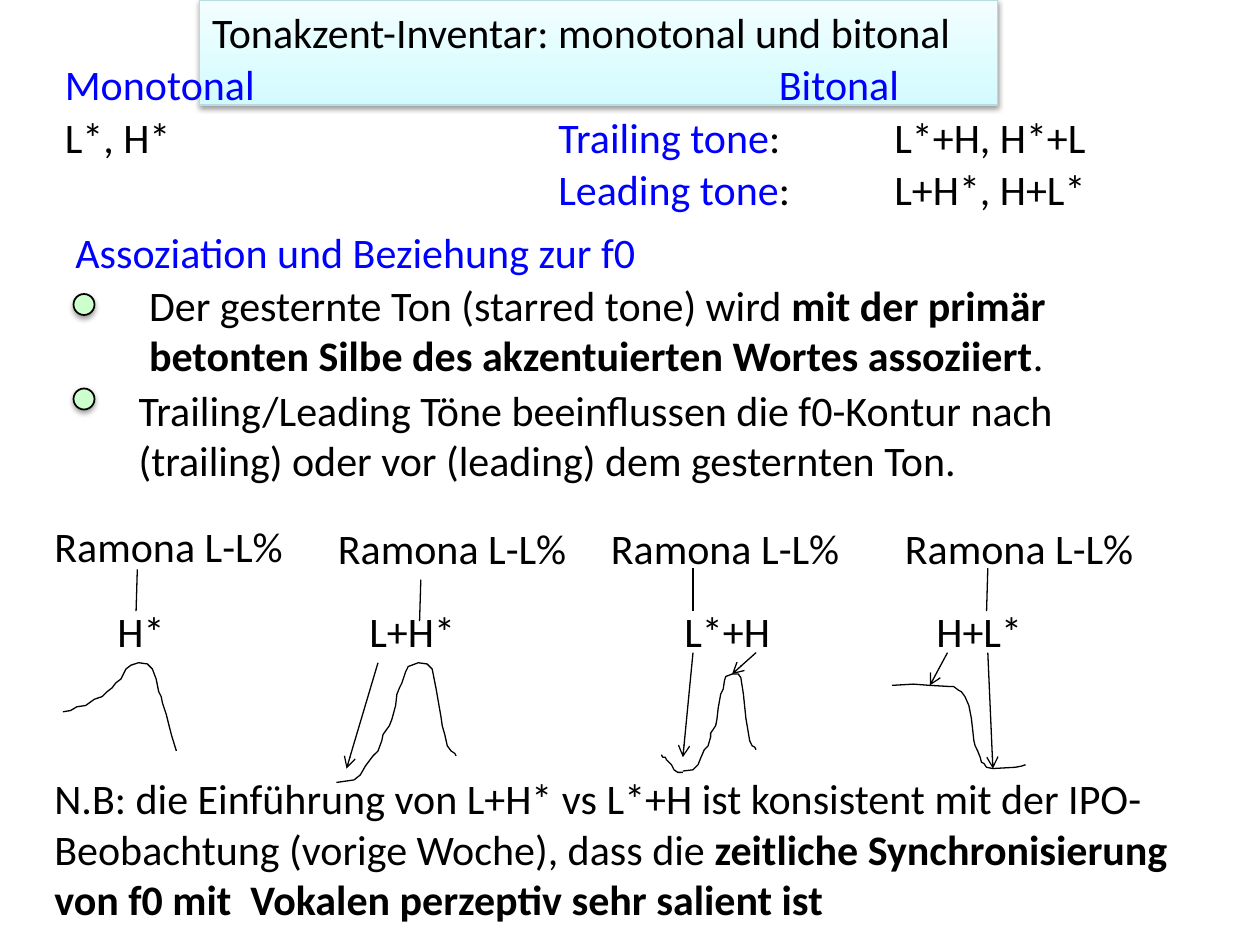
from lxml import etree
from pptx import Presentation
from pptx.dml.color import RGBColor
from pptx.enum.shapes import MSO_CONNECTOR, MSO_SHAPE
from pptx.enum.text import MSO_ANCHOR, MSO_AUTO_SIZE, PP_ALIGN
from pptx.oxml import parse_xml
from pptx.oxml.ns import qn
from pptx.util import Inches, Pt

STRAIGHT = MSO_CONNECTOR.STRAIGHT
OVAL = MSO_SHAPE.OVAL
TOP = MSO_ANCHOR.TOP
LEFT = PP_ALIGN.LEFT
FIT_SHAPE = MSO_AUTO_SIZE.SHAPE_TO_FIT_TEXT
COLORS = {
    "black": "000000", "blue": "0000FF", "green": "CCFFCC",
    "cyan": "D3FBFF", "pale": "F2FEFF", "edge": "B6DCDF",
}
RGB = {name: RGBColor.from_string(value) for name, value in COLORS.items()}
SHADOW = (
    '<a:outerShdw xmlns:a="http://schemas.openxmlformats.org/drawingml/2006/main" '
    'blurRad="40000" dist="20000" dir="5400000" rotWithShape="0">'
    '<a:srgbClr val="000000"><a:alpha val="38000"/></a:srgbClr></a:outerShdw>'
)

prs = Presentation()
prs.slide_width, prs.slide_height = Inches(10), Inches(7.5)
CELL = prs.slide_width / 120
FINE = prs.slide_width / 1000
s = prs.slides.add_slide(prs.slide_layouts[3])
title, first_item, second_item = s.placeholders


def write(sp, box, runs):
    sp.left, sp.top, sp.width, sp.height = [int(n * CELL) for n in box]
    tf = sp.text_frame
    tf.word_wrap = True
    tf.auto_size = FIT_SHAPE
    tf.vertical_anchor = TOP
    p = tf.paragraphs[0]
    p.alignment = LEFT
    p.space_before = Pt(0)
    for text, color, bold in runs:
        r = p.add_run()
        r.text = text
        r.font.name = "Calibri"
        r.font.size = Pt(24)
        r.font.bold = bold
        r.font.color.rgb = RGB[color]


def add_shadow(sp):
    sp.shadow.inherit = False
    sp._element.spPr.find(qn("a:effectLst")).append(parse_xml(SHADOW))


write(title, (19, 0, 76, 6.1), [("Tonakzent-Inventar: monotonal und bitonal", "black", False)])
title.fill.gradient()
title.fill.gradient_angle = 90
for stop, color in zip(title.fill.gradient_stops, ("cyan", "pale")):
    stop.color.rgb = RGB[color]
title.line.color.rgb = RGB["edge"]
title.line.width = Pt(0.75)
add_shadow(title)

texts = [
    ((5, 5, 25, 6.1), [("Monotonal", "blue", False)]),
    ((73, 5, 17, 6.1), [("Bitonal", "blue", False)]),
    ((5, 10, 18, 6.1), [("L*, H*", "black", False)]),
    ((6, 21, 74, 6), [("Assoziation und Beziehung zur f0", "blue", False)]),
    ((4, 73, 109, 15.7), [
        ("N.B: die Einführung von L+H* vs L*+H ist konsistent mit der "
         "IPO-Beobachtung (vorige Woche), dass die ", "black", False),
        ("zeitliche Synchronisierung von f0 mit  Vokalen perzeptiv sehr salient ist", "black", True),
    ]),
]
for row, label, accents in [(10, "Trailing tone", "L*+H, H*+L"), (15, "Leading tone", "L+H*, H+L*")]:
    texts.append(((52, row, 29, 6.1), [(label, "blue", False), (":", "black", False)]))
    texts.append(((84, row, 23, 6.1), [(accents, "black", False)]))
for word_col, word_row, accent_col, accent in [
    (4, 49, 10, "H*"), (31, 49.2, 34, "L+H*"), (57, 49.2, 64, "L*+H"), (85, 49.2, 88, "H+L*"),
]:
    texts.append(((word_col, word_row, 28, 6.1), [("Ramona L-L%", "black", False)]))
    texts.append(((accent_col, 57.1, 13, 6.1), [(accent, "black", False)]))
for box, runs in texts:
    write(s.shapes.add_textbox(0, 0, 0, 0), box, runs)

items = [
    (first_item, (13, 26, 94, 10.9), 28, [
        ("Der gesternte Ton (starred tone) wird ", "black", False),
        ("mit der primär betonten Silbe des akzentuierten Wortes assoziiert", "black", True),
        (".", "black", False),
    ]),
    (second_item, (12, 36, 97, 10.9), 37, [
        ("Trailing/Leading Töne beeinflussen die f0-Kontur nach (trailing) "
         "oder vor (leading) dem gesternten Ton.", "black", False),
    ]),
]
for sp, box, dot_row, runs in items:
    write(sp, box, runs)
    pPr = sp.text_frame.paragraphs[0]._p.get_or_add_pPr()
    pPr.set("marL", "0")
    pPr.set("indent", "0")
    etree.SubElement(pPr, qn("a:buNone"))
    dot = s.shapes.add_shape(OVAL, int(7 * CELL), int(dot_row * CELL), int(2 * CELL), int(2 * CELL))
    dot.fill.solid()
    dot.fill.fore_color.rgb = RGB["green"]
    dot.line.color.rgb = RGB["black"]
    dot.line.width = Pt(1)
    add_shadow(dot)

contours = [
    [(50, 565), (56, 564), (61, 561), (68, 560), (75, 555), (81, 553), (85, 549), (89, 546),
     (92, 542), (96, 539), (100, 531), (104, 528), (110, 526), (117, 527), (121, 531), (124, 539),
     (126, 549), (128, 553), (129, 558), (132, 567), (136, 583), (140, 596)],
    [(267, 621), (281, 619), (286, 615), (290, 608), (296, 600), (300, 596), (303, 588),
     (304, 583), (309, 576), (311, 571), (314, 560), (315, 551), (317, 546), (319, 542),
     (322, 533), (324, 529), (332, 526), (339, 527), (343, 531), (346, 546), (350, 569),
     (351, 576), (353, 583), (355, 592), (358, 596), (361, 598), (362, 600)],
    [(542, 612), (550, 611), (554, 607), (556, 602), (559, 595), (562, 592), (564, 585),
     (564, 582), (568, 576), (569, 571), (570, 562), (572, 551), (574, 547), (575, 540),
     (576, 537), (581, 535), (586, 535), (588, 538), (590, 551), (592, 570), (594, 582),
     (595, 588), (597, 592), (599, 593), (600, 595)],
    [(525, 599), (526, 601), (528, 601), (529, 603), (533, 607), (535, 611), (538, 613), (542, 613)],
    [(708, 544), (725, 543), (738, 544), (755, 545), (757, 545), (761, 548), (763, 549),
     (766, 553), (769, 560), (771, 570), (772, 579), (773, 588), (774, 592), (776, 596),
     (778, 601), (779, 605), (781, 606), (783, 609), (788, 610), (806, 609), (811, 608), (814, 607)],
]
for points in contours:
    fb = s.shapes.build_freeform(*points[0], scale=FINE)
    fb.add_line_segments(points[1:], close=False)
    curve = fb.convert_to_shape()
    curve.shadow.inherit = False
    curve.fill.background()
    curve.line.color.rgb = RGB["black"]
    curve.line.width = Pt(0.75)

stems = [(109, 452, 108, 485), (334, 460, 333, 493), (550, 451, 550, 485), (784, 451, 783, 485)]
arrows = [(300, 526, 275, 610), (550, 518, 542, 601), (600, 518, 581, 535),
          (784, 518, 788, 610), (752, 518, 738, 544)]
for ends in stems + arrows:
    line = s.shapes.add_connector(STRAIGHT, *[int(n * FINE) for n in ends])
    line.line.color.rgb = RGB["black"]
    line.line.width = Pt(0.75)
    if ends in arrows:
        etree.SubElement(line.line._get_or_add_ln(), qn("a:tailEnd"), type="arrow")
    etree.SubElement(line._element.spPr, qn("a:effectLst"))

prs.save("out.pptx")
